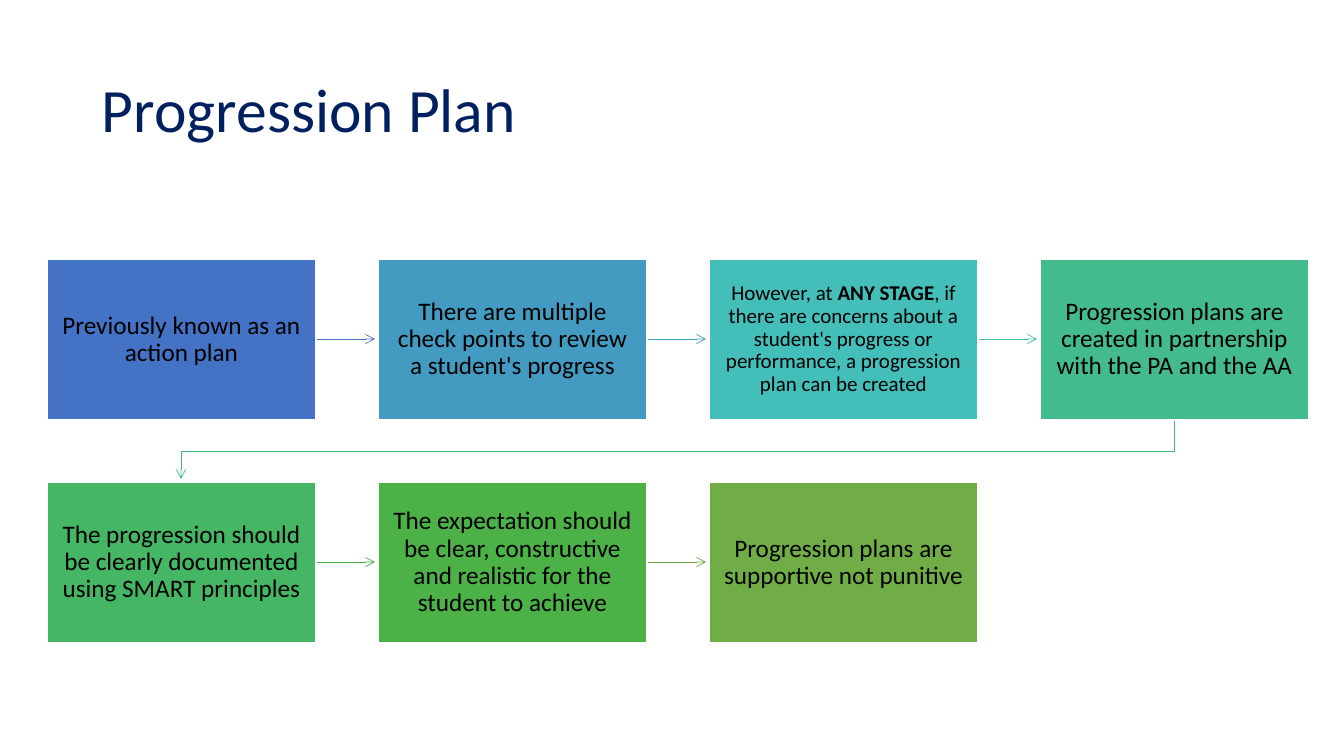
from pptx import Presentation
from pptx.dml.color import RGBColor
from pptx.enum.shapes import MSO_CONNECTOR, MSO_SHAPE
from pptx.enum.text import MSO_ANCHOR, PP_ALIGN
from pptx.oxml.ns import qn
from pptx.util import Pt
from lxml.etree import SubElement

EMU_PER_PX = 914400 / 100.8
COLORS = {
    "title": "002060",
    "text": "000000",
    "edge": "FFFFFF",
}
STEPS = [
    ("4472C4", "4472C4", 18, ["Previously known as an action plan"]),
    ("449BC1", "44A3C0", 18, ["There are multiple check points to review a student's progress"]),
    ("43BEB9", "43BDA7", 15, [
        "However, at ",
        "ANY STAGE",
        ", if there are concerns about a student's progress or performance, a progression plan can be created",
    ]),
    ("43BB8D", "44B874", 18, ["Progression plans are created in partnership with the PA and the AA"]),
    ("45B664", "46B246", 18, ["The progression should be clearly documented using SMART principles"]),
    ("4CB146", "70AD47", 18, ["The expectation should be clear, constructive and realistic for the student to achieve"]),
    ("70AD47", None, 18, ["Progression plans are supportive not punitive"]),
]
COLUMNS = 4
LEFT, TOP = 47, 259
WIDTH, HEIGHT = 269, 161
COLUMN_PITCH, ROW_PITCH = 331, 223


def px(length):
    return round(length * EMU_PER_PX)


def apply(target, values):
    for name, value in values.items():
        setattr(target, name, value)


class FlowSlide:
    font = "Calibri"
    line_spacing = 0.9

    def __init__(self, deck):
        self.shapes = deck.slides.add_slide(deck.slide_layouts[6]).shapes

    def set_text(self, shape, runs, size, color, align, insets):
        frame = shape.text_frame
        side, end = insets
        apply(frame, {
            "word_wrap": True,
            "vertical_anchor": MSO_ANCHOR.MIDDLE,
            "margin_left": px(side),
            "margin_right": px(side),
            "margin_top": px(end),
            "margin_bottom": px(end),
        })
        paragraph = frame.paragraphs[0]
        apply(paragraph, {"alignment": align, "line_spacing": self.line_spacing})
        for position, words in enumerate(runs):
            run = paragraph.add_run()
            run.text = words
            apply(run.font, {"name": self.font, "size": Pt(size), "bold": position == 1})
            run.font.color.rgb = RGBColor.from_string(color)

    def title(self, words, left, top, width, height):
        heading = self.shapes.add_textbox(px(left), px(top), px(width), px(height))
        self.set_text(heading, [words], 44, COLORS["title"], PP_ALIGN.LEFT, (10, 5))

    def step(self, left, top, fill, size, runs):
        box = self.shapes.add_shape(MSO_SHAPE.RECTANGLE, px(left), px(top), px(WIDTH), px(HEIGHT))
        box.shadow.inherit = False
        box.fill.solid()
        box.fill.fore_color.rgb = RGBColor.from_string(fill)
        box.line.color.rgb = RGBColor.from_string(COLORS["edge"])
        box.line.width = Pt(1.5)
        self.set_text(box, runs, size, COLORS["text"], PP_ALIGN.CENTER, (13, 14))

    def style_arrow(self, arrow, color):
        arrow.line.color.rgb = RGBColor.from_string(color)
        arrow.line.width = Pt(0.5)
        properties = arrow._element.spPr
        SubElement(properties.find(qn("a:ln")), qn("a:tailEnd"), type="arrow")
        if properties.find(qn("a:effectLst")) is None:
            SubElement(properties, qn("a:effectLst"))

    def arrow(self, start, end, y, color):
        link = self.shapes.add_connector(MSO_CONNECTOR.STRAIGHT, px(start), px(y), px(end), px(y))
        self.style_arrow(link, color)

    def return_arrow(self, points, color):
        corners = [(px(x), px(y)) for x, y in points]
        builder = self.shapes.build_freeform(*corners[0])
        builder.add_line_segments(corners[1:], close=False)
        route = builder.convert_to_shape()
        route.fill.background()
        route.shadow.inherit = False
        self.style_arrow(route, color)


def main():
    deck = Presentation()
    apply(deck, {"slide_width": px(1344), "slide_height": px(756)})
    slide = FlowSlide(deck)
    slide.title("Progression Plan", 92, 40, 1159, 146)

    for index, (fill, link_color, size, runs) in enumerate(STEPS):
        row, column = divmod(index, COLUMNS)
        left = LEFT + column * COLUMN_PITCH
        top = TOP + row * ROW_PITCH
        right, bottom = left + WIDTH, top + HEIGHT
        if link_color and column < COLUMNS - 1:
            slide.arrow(right + 1, right + 59, top + HEIGHT // 2, link_color)
        elif link_color:
            start_x, end_x = left + WIDTH // 2, LEFT + WIDTH // 2
            slide.return_arrow([
                (start_x, bottom + 1),
                (start_x, bottom + 31),
                (end_x, bottom + 31),
                (end_x, bottom + 59),
            ], link_color)
        slide.step(left, top, fill, size, runs)

    deck.save("out.pptx")


if __name__ == "__main__":
    main()
